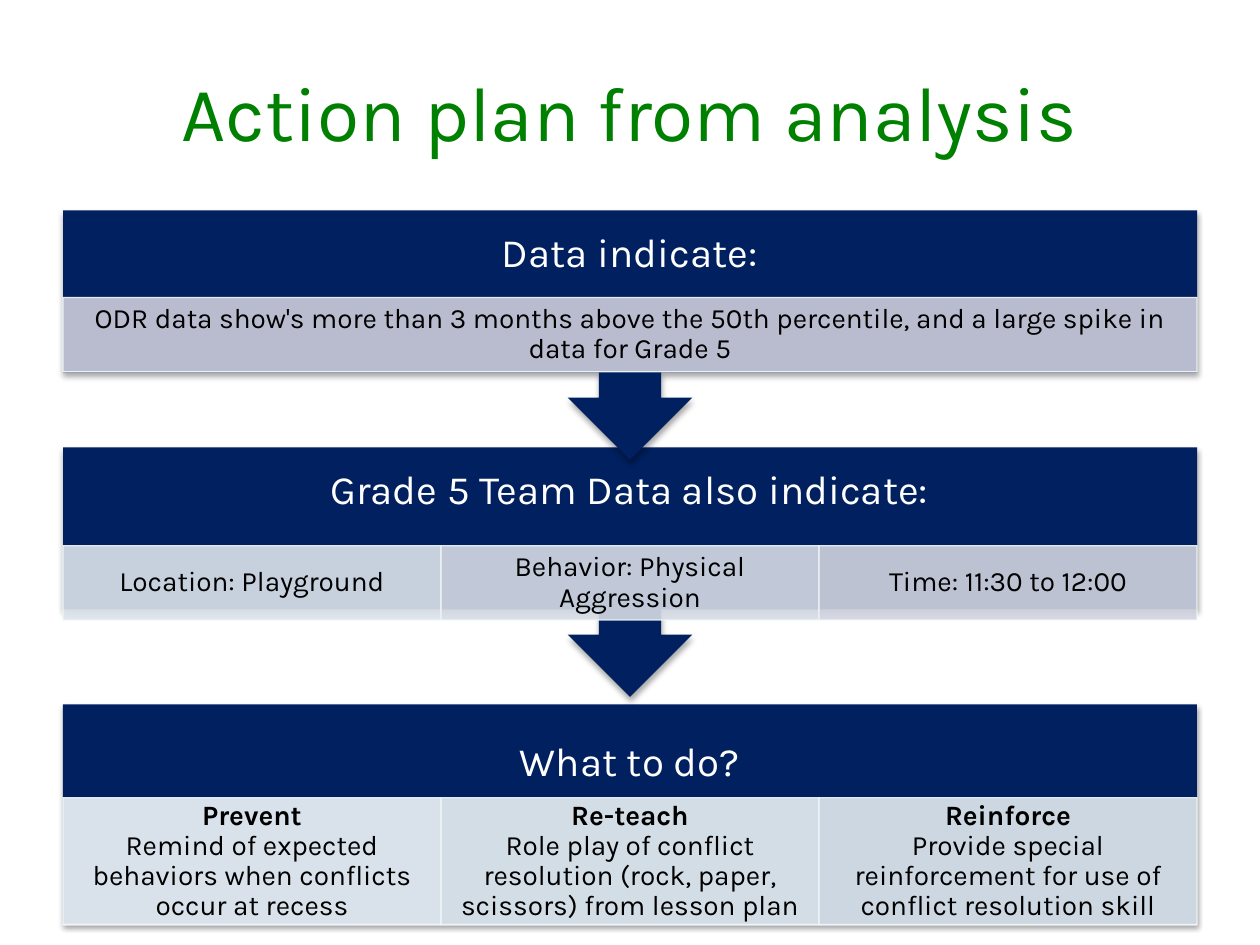
from dataclasses import dataclass

from lxml.etree import SubElement
from pptx import Presentation
from pptx.dml.color import RGBColor
from pptx.enum.shapes import MSO_SHAPE as Shape
from pptx.enum.text import MSO_ANCHOR as Anchor, PP_ALIGN as Align
from pptx.oxml.ns import qn
from pptx.util import Pt


@dataclass(frozen=True)
class Theme:
    font: str = "Karla"
    title: str = "008000"
    band: str = "002060"
    band_text: str = "FFFFFF"
    cell_text: str = "000000"
    cell_line: str = "F1F8F9"
    shadow: str = "000000"
    title_size: int = 44
    band_size: int = 23
    cell_size: int = 16


THEME = Theme()
LEFT, WIDTH = 36, 648

# Bottom band first, so that each arrow lies over the band below it.
# Cells are (fill colour, bold heading, text).
BANDS = [
    dict(kind=Shape.RECTANGLE, top=402.5, height=125.3, title="What to do?",
         title_height=67.7, cell_top=455.8, cell_height=72.7, cells=[
             ("F1F8F9", "Prevent",
              "Remind of expected behaviors when conflicts occur at recess"),
             ("EAF2F5", "Re-teach",
              "Role play of conflict resolution (rock, paper, scissors) from lesson plan"),
             ("E3EBF0", "Reinforce",
              "Provide special reinforcement for use of conflict resolution skill"),
         ]),
    dict(kind=Shape.UP_ARROW_CALLOUT, top=255.6, height=142.6,
         title="Grade 5 Team Data also indicate:",
         title_height=50.4, cell_top=311.8, cell_height=42.5, cells=[
             ("DDE4EB", "", "Location: Playground"),
             ("D7DCE6", "", "Behavior: Physical Aggression"),
             ("D2D4E0", "", "Time: 11:30 to 12:00"),
         ]),
    dict(kind=Shape.UP_ARROW_CALLOUT, top=120.2, height=142.6, title="Data indicate:",
         title_height=50.4, cell_top=170, cell_height=42.5, cells=[
             ("CDCDDA", "", "ODR data show's more than 3 months above the 50th "
                            "percentile, and a large spike in data for Grade 5"),
         ]),
]


def write_text(shape, text, *, size, color, heading="", spacing=None, inset=(7.2, 3.6)):
    """Centre text in a shape, below an optional bold heading."""
    frame = shape.text_frame
    frame.word_wrap = True
    frame.vertical_anchor = Anchor.MIDDLE
    frame.margin_left = frame.margin_right = Pt(inset[0])
    frame.margin_top = frame.margin_bottom = Pt(inset[1])
    paragraph = frame.paragraphs[0]
    paragraph.alignment = Align.CENTER
    paragraph.line_spacing = spacing
    if heading:
        paragraph.add_run().text = heading
        paragraph.add_line_break()
    paragraph.add_run().text = text
    for run in paragraph.runs:
        run.font.name = THEME.font
        run.font.size = Pt(size)
        run.font.color.rgb = RGBColor.from_string(color)
    if heading:
        paragraph.runs[0].font.bold = True


def add_text(slide, text, left, top, width, height, **text_format):
    box = slide.shapes.add_textbox(Pt(left), Pt(top), Pt(width), Pt(height))
    write_text(box, text, **text_format)


def add_block(slide, kind, left, top, width, height, fill):
    shape = slide.shapes.add_shape(kind, Pt(left), Pt(top), Pt(width), Pt(height))
    shape.shadow.inherit = False
    shape.fill.solid()
    shape.fill.fore_color.rgb = RGBColor.from_string(fill)
    shape.line.fill.background()
    return shape


def set_alpha(color_element, percent):
    SubElement(color_element, qn("a:alpha"), val=str(percent * 1000))


def add_shadow(shape):
    effects = shape._element.spPr.find(qn("a:effectLst"))
    shadow = SubElement(effects, qn("a:outerShdw"), blurRad=str(Pt(3.1)),
                        dist=str(Pt(1.8)), dir="5400000", rotWithShape="0")
    set_alpha(SubElement(shadow, qn("a:srgbClr"), val=THEME.shadow), 35)


def add_cell(slide, left, top, width, height, fill, heading, text):
    cell = add_block(slide, Shape.RECTANGLE, left, top, width, height, fill)
    cell.line.color.rgb = RGBColor.from_string(THEME.cell_line)
    cell.line.width = Pt(0.75)
    for color_element in cell._element.spPr.iter(qn("a:srgbClr")):
        set_alpha(color_element, 90)
    write_text(cell, text, heading=heading, size=THEME.cell_size,
               color=THEME.cell_text, spacing=0.9, inset=(8.96, 1.6))


def add_band(slide, kind, top, height, title, title_height, cell_top, cell_height, cells):
    band = add_block(slide, kind, LEFT, top, WIDTH, height, THEME.band)
    add_shadow(band)
    if kind == Shape.UP_ARROW_CALLOUT:
        band.rotation = 180
    add_text(slide, title, LEFT, top, WIDTH, title_height, size=THEME.band_size,
             color=THEME.band_text, spacing=0.9, inset=(13, 13))
    cell_width = WIDTH / len(cells)
    for column, cell in enumerate(cells):
        add_cell(slide, LEFT + column * cell_width, cell_top, cell_width, cell_height, *cell)


def main():
    presentation = Presentation()
    presentation.slide_width, presentation.slide_height = Pt(720), Pt(540)
    slide = presentation.slides.add_slide(presentation.slide_layouts[6])

    # Title
    add_text(slide, "Action plan from analysis", LEFT, 18, WIDTH, 90,
             size=THEME.title_size, color=THEME.title)

    # Steps
    for band in BANDS:
        add_band(slide, **band)

    presentation.save("out.pptx")


if __name__ == "__main__":
    main()
